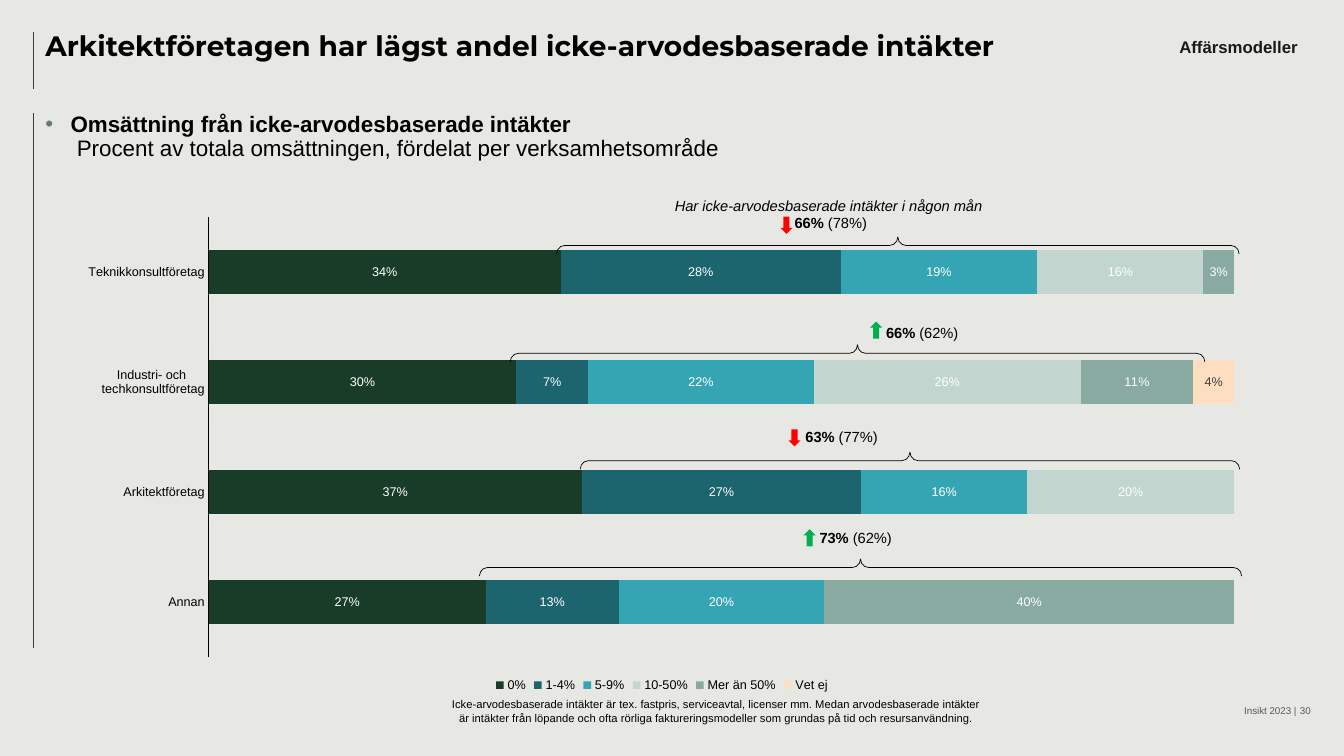
import lxml.etree
import pptx
import pptx.chart.data
import pptx.dml.color
import pptx.enum.chart
import pptx.enum.shapes
import pptx.enum.text
import pptx.oxml.ns
import pptx.util

RGBColor = pptx.dml.color.RGBColor
PAPER = RGBColor(0xE7, 0xE8, 0xE4)
BLACK = RGBColor(0, 0, 0)
WHITE = RGBColor(0xFF, 0xFF, 0xFF)
RULE = RGBColor(0x32, 0x3E, 0x39)
BULLET = RGBColor(0x65, 0x7B, 0x71)
GREY = RGBColor(0x59, 0x59, 0x59)
DARK = RGBColor(0x19, 0x19, 0x19)
LABEL = RGBColor(0x40, 0x40, 0x40)
RED = RGBColor(0xFF, 0, 0)
GREEN = RGBColor(0, 0xB0, 0x50)

LEFT, MID, RIGHT = (pptx.enum.text.PP_ALIGN.LEFT, pptx.enum.text.PP_ALIGN.CENTER,
                    pptx.enum.text.PP_ALIGN.RIGHT)
TOP, LOW = pptx.enum.text.MSO_ANCHOR.TOP, pptx.enum.text.MSO_ANCHOR.BOTTOM
SHAPE = pptx.enum.shapes.MSO_SHAPE

GROUPS = ["Teknikkonsultföretag", "Industri- och \ntechkonsultföretag", "Arkitektföretag", "Annan"]
SERIES = [
    ("0%", (0.34, 0.3, 0.36, 0.27), RGBColor(0x19, 0x3C, 0x28), WHITE, {2: "37%"}),
    ("1-4%", (0.27, 0.07, 0.27, 0.13), RGBColor(0x1C, 0x65, 0x6E), WHITE, {0: "28%"}),
    ("5-9%", (0.19, 0.22, 0.16, 0.2), RGBColor(0x35, 0xA5, 0xB4), WHITE, {}),
    ("10-50%", (0.16, 0.26, 0.2, 0), RGBColor(0xC3, 0xD5, 0xCF), WHITE, {}),
    ("Mer än 50%", (0.03, 0.11, 0, 0.4), RGBColor(0x88, 0xAA, 0xA0), WHITE, {}),
    ("Vet ej", (0, 0.04, 0, 0), RGBColor(0xFF, 0xDD, 0xC1), LABEL, {}),
]
BRACES = [(89.05, 24.35, 67.7), (85.05, 35.05, 68.9), (90.25, 45.7, 65.4), (85.35, 56.3, 75.6)]
ARROWS = [(77.4, 21.5, False), (86.3, 31.9, True), (78.2, 42.6, False), (79.7, 52.5, True)]
SHARES = [(86.9, 31.6, "66% ", "(62%)"), (78.9, 41.9, "63% ", "(77%)"), (80.3, 52, "73% ", "(62%)")]


def add(node, tag, **attrs):
    """Append a namespaced child with the given attributes."""
    return lxml.etree.SubElement(node, pptx.oxml.ns.qn(tag), **attrs)


class Page:
    """One slide on a grid of 133.3 columns and 75 rows."""

    def __init__(self, deck):
        self.font = "Arial"
        self.col = deck.slide_width / 133.3
        self.row = deck.slide_height / 75
        self.slide = deck.slides.add_slide(deck.slide_layouts[1])
        self.slide.background.fill.solid()
        self.slide.background.fill.fore_color.rgb = PAPER

    def span(self, left, top, wide, high):
        """Turn grid cells into slide lengths."""
        return (round(left * self.col), round(top * self.row),
                round(wide * self.col), round(high * self.row))

    def style(self, font, size, color=BLACK, bold=None, face=None):
        """Set the face, size, colour and weight of a font."""
        font.name, font.size, font.bold = face or self.font, pptx.util.Pt(size), bold
        font.color.rgb = color

    def fill(self, frame, text, size, tail="", color=BLACK, looks="", align=LEFT,
             anchor=TOP, wrap=True, flush=False, face=None):
        """Fill a frame; looks holds b, i or n for each run."""
        frame.text = text
        frame.word_wrap, frame.vertical_anchor = wrap, anchor
        frame.auto_size = pptx.enum.text.MSO_AUTO_SIZE.NONE
        if flush:
            frame.margin_left = frame.margin_right = frame.margin_top = frame.margin_bottom = 0
        par = frame.paragraphs[0]
        par.alignment = align
        if tail:
            par.add_run().text = tail
        for run, look in zip(par.runs, looks or "n" * len(par.runs)):
            self.style(run.font, size, color, look == "b", face)
            run.font.italic = look == "i"
        return par

    def holder(self, index, cells, text, size, **more):
        """Move and fill a placeholder of the layout."""
        box = self.slide.placeholders[index]
        box.left, box.top, box.width, box.height = self.span(*cells)
        par = self.fill(box.text_frame, text, size, flush=True, **more)
        par.line_spacing, par.space_before = 0.9, pptx.util.Pt(0)
        return par

    def bullet(self, par):
        """Give a paragraph a hanging round bullet."""
        props = par._p.get_or_add_pPr()
        props.set("marL", str(pptx.util.Inches(0.25)))
        props.set("indent", str(-pptx.util.Inches(0.25)))
        add(add(props, "a:buClr"), "a:srgbClr", val=str(BULLET))
        add(props, "a:buFont", typeface=self.font)
        add(props, "a:buChar", char="•")

    def note(self, cells, text, size, **more):
        """Add a text box."""
        box = self.slide.shapes.add_textbox(*self.span(*cells))
        self.fill(box.text_frame, text, size, **more)

    def rule(self, col, top, end):
        """Draw a thin upright line."""
        x, y, _, high = self.span(col, top, 0, end - top)
        line = self.slide.shapes.add_connector(
            pptx.enum.shapes.MSO_CONNECTOR.STRAIGHT, x, y, x, y + high)
        line.line.color.rgb, line.line.width = RULE, pptx.util.Pt(0.5)
        add(line._element.spPr, "a:effectLst")

    def brace(self, mid, row, wide):
        """Draw a brace lying over a bar, centred on a cell."""
        cells = self.span(mid - 0.85, row - wide / 2, 1.7, wide)
        mark = self.slide.shapes.add_shape(SHAPE.RIGHT_BRACE, *cells)
        mark.rotation, mark.shadow.inherit = 270, False
        mark.adjustments[0], mark.adjustments[1] = 0.476, 0.5
        mark.fill.background()
        mark.line.color.rgb, mark.line.width = BLACK, pptx.util.Pt(0.5)

    def arrow(self, col, row, rise):
        """Draw a green rising or red falling arrow."""
        mark = self.slide.shapes.add_shape(SHAPE.DOWN_ARROW, *self.span(col, row, 1.2, 1.7))
        mark.rotation, mark.shadow.inherit = 180 if rise else 0, False
        mark.fill.solid()
        mark.fill.fore_color.rgb = GREEN if rise else RED
        mark.line.fill.background()

    def bars(self, cells, groups, series):
        """Add the stacked bar chart with its labels and legend."""
        data = pptx.chart.data.CategoryChartData(number_format="0%")
        data.categories = groups
        for name, values, *_ in series:
            data.add_series(name, values)
        kinds = pptx.enum.chart
        chart = self.slide.shapes.add_chart(
            kinds.XL_CHART_TYPE.BAR_STACKED_100, *self.span(*cells), data).chart
        self.style(chart.font, 10)
        chart.has_title = False
        chart.has_legend = True
        chart.legend.position = kinds.XL_LEGEND_POSITION.BOTTOM
        chart.legend.include_in_layout = False
        self.style(chart.legend.font, 9)
        axis = chart.category_axis
        axis.reverse_order = True
        axis.major_tick_mark = axis.minor_tick_mark = kinds.XL_TICK_MARK.NONE
        axis.format.line.color.rgb, axis.format.line.width = BLACK, pptx.util.Pt(0.75)
        self.style(axis.tick_labels.font, 9)
        chart.value_axis.visible = chart.value_axis.has_major_gridlines = False
        plot = chart.plots[0]
        plot.gap_width, plot.overlap, plot.vary_by_categories = 150, 100, False
        center = kinds.XL_LABEL_POSITION.CENTER
        for bar, (_, _, shade, ink, fixed) in zip(plot.series, series):
            bar.format.fill.solid()
            bar.format.fill.fore_color.rgb = shade
            tags = bar.data_labels
            tags.show_value, tags.position = True, center
            tags.number_format, tags.number_format_is_linked = "0%;;", False
            self.style(tags.font, 9, ink)
            for spot, text in fixed.items():
                tag = bar.points[spot].data_label
                tag.text_frame.text = text
                tag.position = center
                self.style(tag.text_frame.paragraphs[0].runs[0].font, 9, ink, False)
        self.place(chart, x=0.12, y=0.02, w=0.86, h=0.9)

    def place(self, chart, **shares):
        """Fix the inner plot area as shares of the chart."""
        area = chart._chartSpace.chart.plotArea
        for old in area.findall(pptx.oxml.ns.qn("c:layout")):
            area.remove(old)
        frame = add(area, "c:layout")
        area.insert(0, frame)
        hand = add(frame, "c:manualLayout")
        add(hand, "c:layoutTarget", val="inner")
        for side in "xy":
            add(hand, f"c:{side}Mode", val="edge")
        for side, share in shares.items():
            add(hand, f"c:{side}", val=str(share))


def main():
    """Build and save the slide."""
    deck = pptx.Presentation()
    deck.slide_width, deck.slide_height = pptx.util.Inches(13.33), pptx.util.Inches(7.5)
    page = Page(deck)
    page.rule(3.3, 3.2, 8.8)
    page.rule(3.3, 11.2, 64.3)
    page.bars((6.5, 20.6, 118.3, 48.5), GROUPS, SERIES)
    page.holder(0, (4.5, 3.2, 109.2, 5.6),
                "Arkitektföretagen har lägst andel icke-arvodesbaserade intäkter",
                20, looks="b", face="Montserrat")
    page.bullet(page.holder(
        1, (4.5, 11.2, 79, 6.1), "Omsättning från icke-arvodesbaserade intäkter\v"
        " Procent av totala omsättningen, fördelat per verksamhetsområde", 16, looks="bn"))
    for left, wide, text in ((83.6, 45, "Insikt 2023 |"), (100, 30, "30")):
        page.note((left, 69.3, wide, 1.8), text, 7, color=GREY, align=RIGHT, anchor=LOW, flush=True)
    page.note((115.7, 3.2, 14.3, 3), "Affärsmodeller", 12, color=DARK, looks="b", align=MID)
    page.note((43.4, 68.7, 55.3, 3.7),
              "Icke-arvodesbaserade intäkter är tex. fastpris, serviceavtal, licenser mm. "
              "Medan arvodesbaserade intäkter är intäkter från löpande och ofta rörliga "
              "faktureringsmodeller som grundas på tid och resursanvändning.", 8, align=MID)
    for brace in BRACES:
        page.brace(*brace)
    page.note((65.7, 19, 33, 4.5), "Har icke-arvodesbaserade intäkter i någon mån\v 66% ",
              10.5, tail="(78%)", looks="ibn", align=MID, wrap=False)
    for col, row, now, past in SHARES:
        page.note((col, row, 9.3, 2.8), now, 10.5, tail=past, looks="bn", wrap=False)
    for arrow in ARROWS:
        page.arrow(*arrow)
    deck.save("out.pptx")


if __name__ == "__main__":
    main()
